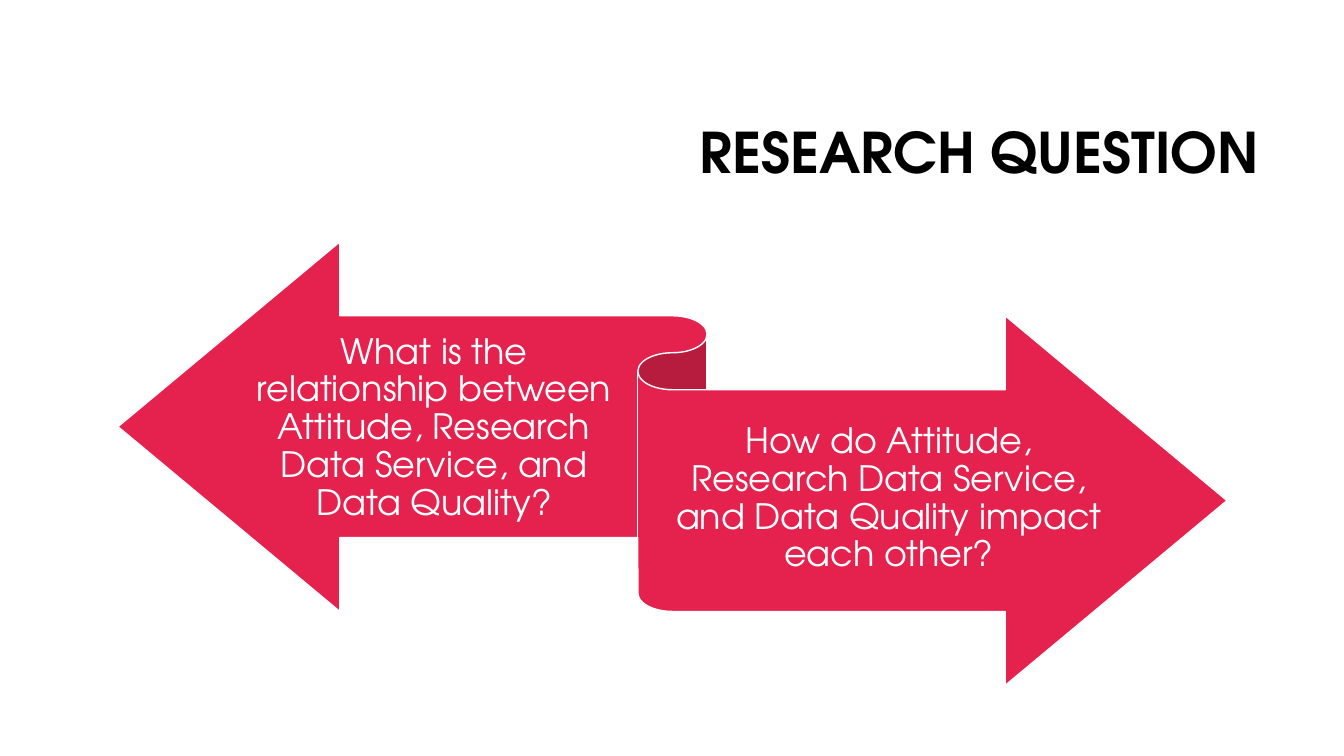
"""Build the research question slide with a two-way ribbon."""
import pptx
import pptx.dml.color
import pptx.enum.shapes
import pptx.enum.text
import pptx.util

TITLE = {"text": "RESEARCH QUESTION", "box": (317, 84, 942, 141)}
RIBBON_BOX = (117, 240, 1100, 440)
QUESTIONS = [
    {
        "text": "What is the relationship between Attitude, Research Data Service, and Data Quality?",
        "box": (249, 317, 363, 216),
    },
    {
        "text": "How do Attitude, Research Data Service, and Data Quality impact each other?",
        "box": (667, 387, 429, 216),
    },
]
THEME = {
    "font": "TeX Gyre Adventor",
    "title": "000000",
    "ribbon": "E5224E",
    "light": "FFFFFF",
    "title_size": 40,
    "question_size": 25,
    "line_width": 1,
}
SLIDE_SIZE = (1333, 750)
EMU_PER_PX = 9144


def px(*lengths):
    return [pptx.util.Emu(length * EMU_PER_PX) for length in lengths]


def rgb(name):
    return pptx.dml.color.RGBColor.from_string(THEME[name])


def add_text(slide, text, box, *, size, color, align, bold=False, margins=(10, 5)):
    frame = slide.shapes.add_textbox(*px(*box)).text_frame
    frame.word_wrap = True
    frame.vertical_anchor = pptx.enum.text.MSO_ANCHOR.MIDDLE
    side, edge = px(*margins)
    frame.margin_left = frame.margin_right = side
    frame.margin_top = frame.margin_bottom = edge
    paragraph = frame.paragraphs[0]
    paragraph.alignment = align
    paragraph.line_spacing = 0.9
    run = paragraph.add_run()
    run.text = text
    run.font.name = THEME["font"]
    run.font.size = pptx.util.Pt(THEME[size])
    run.font.bold = bold
    run.font.color.rgb = rgb(color)


def add_ribbon(slide):
    ribbon = slide.shapes.add_shape(
        pptx.enum.shapes.MSO_SHAPE.LEFT_RIGHT_RIBBON, *px(*RIBBON_BOX)
    )
    ribbon.shadow.inherit = False
    ribbon.fill.solid()
    ribbon.fill.fore_color.rgb = rgb("ribbon")
    ribbon.line.color.rgb = rgb("light")
    ribbon.line.width = pptx.util.Pt(THEME["line_width"])


def main():
    presentation = pptx.Presentation()
    presentation.slide_width, presentation.slide_height = px(*SLIDE_SIZE)
    slide = presentation.slides.add_slide(presentation.slide_layouts[6])
    alignment = pptx.enum.text.PP_ALIGN
    add_text(slide, **TITLE, size="title_size", color="title",
             align=alignment.RIGHT, bold=True)
    add_ribbon(slide)
    for question in QUESTIONS:
        add_text(slide, **question, size="question_size", color="light",
                 align=alignment.CENTER, margins=(0, 10))
    presentation.save("out.pptx")


if __name__ == "__main__":
    main()
